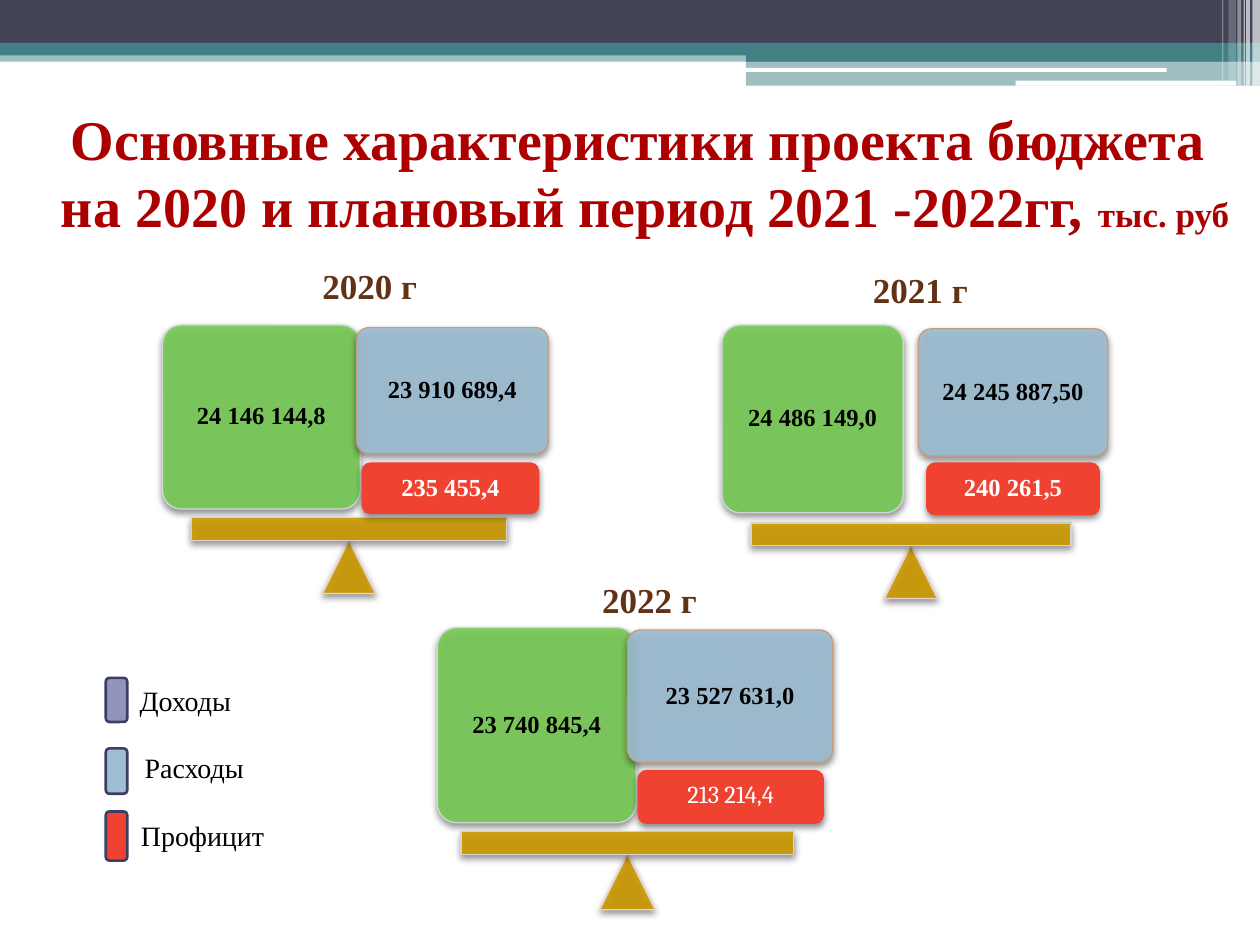
from lxml import etree
from pptx import Presentation
from pptx.dml.color import RGBColor
from pptx.enum.shapes import MSO_SHAPE as Preset
from pptx.enum.text import MSO_ANCHOR as Anchor, MSO_AUTO_SIZE as AutoSize, PP_ALIGN as Align
from pptx.oxml.ns import qn
from pptx.util import Inches, Pt

WHITE = RGBColor(0xFF, 0xFF, 0xFF)
BLACK = RGBColor(0x00, 0x00, 0x00)
NAVY = RGBColor(0x42, 0x44, 0x56)
TEAL = RGBColor(0x43, 0x80, 0x86)
GREEN = RGBColor(0x77, 0xCB, 0x55)
BLUE = RGBColor(0x9D, 0xBE, 0xD3)
RED = RGBColor(0xF0, 0x42, 0x30)
PURPLE = RGBColor(0x93, 0x94, 0xBE)
GOLD = RGBColor(0xCC, 0x99, 0x00)
TITLE_RED = RGBColor(0xAC, 0x00, 0x00)
BROWN = RGBColor(0x62, 0x32, 0x17)
GREEN_EDGE = RGBColor(0xCF, 0xD8, 0xD9)
BLUE_EDGE = RGBColor(0xC6, 0x9B, 0x7E)
PIVOT_EDGE = RGBColor(0xEA, 0xD3, 0xCD)
BEAM_EDGE = RGBColor(0xDA, 0xD2, 0xCE)
LEGEND_EDGE = RGBColor(0x3D, 0x3E, 0x66)

SERIF = "Times New Roman"

BANDS = [
    (0, 0.4, 10, 0.09, TEAL, 50, Preset.RECTANGLE),
    (0, 0, 10, 0.34, NAVY, 100, Preset.RECTANGLE),
    (0, 0.34, 10, 0.1, TEAL, 100, Preset.RECTANGLE),
    (5.92, 0.39, 4.08, 0.1, TEAL, 100, Preset.RECTANGLE),
    (5.92, 0.48, 4.08, 0.2, TEAL, 50, Preset.RECTANGLE),
    (5.91, 0.54, 3.35, 0.03, WHITE, 100, Preset.ROUNDED_RECTANGLE),
    (8.06, 0.64, 1.75, 0.04, WHITE, 100, Preset.ROUNDED_RECTANGLE),
]
STRIPES = [
    (9.94, 0.06, 0.68, 65),
    (9.89, 0.03, 0.68, 65),
    (9.87, 0.01, 0.68, 60),
    (9.82, 0.03, 0.68, 40),
    (9.75, 0.06, 0.64, 20),
    (9.7, 0.01, 0.64, 30),
]
SCALES = [
    {"year": ("2021 г", 6.83, 2.08),
     "income": ("24 486 149,0", 5.73, 2.58, 1.44, 1.49),
     "expense": ("24 245 887,50", 7.29, 2.61, 1.5, 1.01),
     "surplus": ("240 261,5", 7.35, 3.67, 1.38, 0.42),
     "beam": (5.96, 4.15, 2.54, 0.18), "pivot": 0.42},
    {"year": ("2020 г", 2.46, 2.05),
     "income": ("24 146 144,8", 1.29, 2.58, 1.57, 1.46),
     "expense": ("23 910 689,4", 2.83, 2.6, 1.52, 1),
     "surplus": ("235 455,4", 2.87, 3.67, 1.41, 0.41),
     "beam": (1.52, 4.11, 2.5, 0.18), "pivot": 0.42},
    {"year": ("2022 г", 4.68, 4.54),
     "income": ("23 740 845,4", 3.47, 4.98, 1.58, 1.55),
     "expense": ("23 527 631,0", 4.98, 5, 1.63, 1.05),
     "surplus": ("213 214,4", 5.06, 6.11, 1.48, 0.43),
     "surplus_format": {"font": "Cambria", "bold": False},
     "beam": (3.66, 6.6, 2.64, 0.18), "pivot": 0.44},
]
LEGEND = [
    ("Доходы", PURPLE, 5.38, 0.35, 1.01, 5.38, 0.94),
    ("Расходы", BLUE, 5.94, 0.36, 1.05, 5.91, 1),
    ("Профицит", RED, 6.44, 0.39, 1.02, 6.45, 1.19),
]


def write(paragraph, text, size=14, color=BLACK, bold=True, font=SERIF, align=None, spacing=None):
    run = paragraph.add_run()
    run.text = text
    run.font.size = Pt(size)
    run.font.name = font
    run.font.bold = bold
    run.font.color.rgb = color
    if align is not None:
        paragraph.alignment = align
    if spacing is not None:
        paragraph.line_spacing = spacing


class BudgetSlide:
    def __init__(self, slide):
        self.slide = slide

    def title(self, lines, left, top, width, height):
        heading = self.slide.shapes.title
        heading.left, heading.top = Inches(left), Inches(top)
        heading.width, heading.height = Inches(width), Inches(height)
        frame = heading.text_frame
        frame.word_wrap = False
        frame.auto_size = AutoSize.NONE
        frame.vertical_anchor = Anchor.TOP
        for index, parts in enumerate(lines):
            paragraph = frame.add_paragraph() if index else frame.paragraphs[0]
            for text, size in parts:
                write(paragraph, text, size=size, color=TITLE_RED, align=Align.CENTER)

    def block(self, preset, left, top, width, height, fill, opacity=100,
              edge=None, edge_width=0.75, corner=None, shaded=False):
        block = self.slide.shapes.add_shape(
            preset, Inches(left), Inches(top), Inches(width), Inches(height))
        block.shadow.inherit = False
        block.fill.solid()
        block.fill.fore_color.rgb = fill
        if opacity < 100:
            self.fade(block.fill._xPr.find(qn("a:solidFill"))[0], opacity)
        if edge is None:
            block.line.fill.background()
        else:
            block.line.color.rgb = edge
            block.line.width = Pt(edge_width)
        if corner is not None:
            block.adjustments[0] = corner
        if shaded:
            self.shade(block)
        return block

    def fade(self, color, opacity):
        etree.SubElement(color, qn("a:alpha"), val=str(opacity * 1000))

    def shade(self, block):
        effects = block._element.spPr.find(qn("a:effectLst"))
        shadow = etree.SubElement(
            effects, qn("a:outerShdw"), blurRad=str(Pt(4)), dist=str(Pt(2)),
            dir="5400000", rotWithShape="0")
        self.fade(etree.SubElement(shadow, qn("a:srgbClr"), val="000000"), 45)

    def amount(self, text, left, top, width, height, fill, inset=0.1,
               anchor=Anchor.MIDDLE, text_format=None, **style):
        card = self.block(Preset.ROUNDED_RECTANGLE, left, top, width, height, fill,
                          shaded=True, **style)
        frame = card.text_frame
        frame.word_wrap = True
        frame.vertical_anchor = anchor
        frame.margin_left = frame.margin_right = Inches(inset)
        frame.margin_top = frame.margin_bottom = Inches(inset)
        write(frame.paragraphs[0], text, align=Align.CENTER, spacing=0.9, **(text_format or {}))

    def label(self, text, left, top, width, height, **text_format):
        box = self.slide.shapes.add_textbox(
            Inches(left), Inches(top), Inches(width), Inches(height))
        box.text_frame.word_wrap = False
        write(box.text_frame.paragraphs[0], text, **text_format)

    def scale(self, year, income, expense, surplus, beam, pivot, surplus_format=None):
        self.amount(*income, GREEN, opacity=90, edge=GREEN_EDGE, corner=0.1)
        self.amount(*expense, BLUE, opacity=90, edge=BLUE_EDGE, corner=0.1)
        left, top, width, height = beam
        self.block(Preset.ISOSCELES_TRIANGLE, left + (width - pivot) / 2, top + height,
                   pivot, pivot, GOLD, opacity=90, edge=PIVOT_EDGE, shaded=True)
        self.block(Preset.RECTANGLE, *beam, GOLD, opacity=90, edge=BEAM_EDGE, shaded=True)
        self.amount(*surplus, RED, inset=0.08, anchor=Anchor.TOP,
                    text_format={"color": WHITE, **(surplus_format or {})})
        self.label(*year, 0.96, 0.44, size=20, color=BROWN)

    def legend_entry(self, text, fill, top, height, text_left, text_top, text_width):
        self.block(Preset.ROUNDED_RECTANGLE, 0.84, top, 0.17, height, fill,
                   edge=LEGEND_EDGE, edge_width=1.5)
        self.label(text, text_left, text_top, text_width, 0.37, size=16, bold=False)


def main():
    deck = Presentation()
    deck.slide_width, deck.slide_height = Inches(10), Inches(7.5)
    budget = BudgetSlide(deck.slides.add_slide(deck.slide_layouts[5]))
    for left, top, width, height, fill, opacity, preset in BANDS:
        budget.block(preset, left, top, width, height, fill, opacity)
    for left, width, height, opacity in STRIPES:
        budget.block(Preset.RECTANGLE, left, 0, width, height, WHITE, opacity)
    budget.title([
        [("Основные характеристики проекта бюджета ", 32)],
        [("на 2020 и плановый период 2021 -2022гг, ", 32), ("тыс. руб", 20)],
    ], 0.34, 0.78, 9.56, 1.18)
    for scale in SCALES:
        budget.scale(**scale)
    for entry in LEGEND:
        budget.legend_entry(*entry)
    deck.save("out.pptx")


if __name__ == "__main__":
    main()
